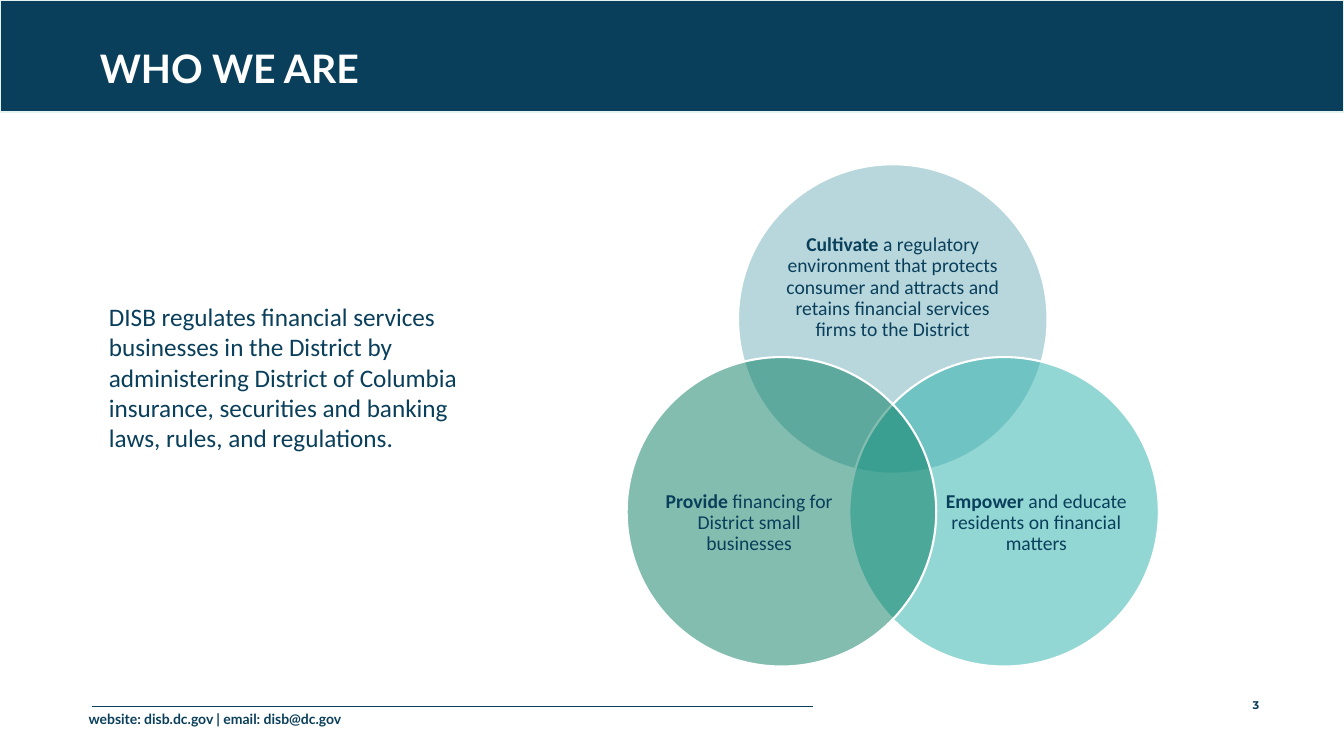
"""Build the "Who we are" slide: a banner, a statement and three overlapping circles."""
from dataclasses import dataclass
from math import cos, radians, sin

from lxml import etree
from pptx import Presentation
from pptx.dml.color import RGBColor
from pptx.enum.shapes import MSO_CONNECTOR, MSO_SHAPE
from pptx.enum.text import MSO_ANCHOR, MSO_AUTO_SIZE, PP_ALIGN
from pptx.oxml.ns import qn
from pptx.util import Inches, Length, Pt

LEFT, CENTER, RIGHT = PP_ALIGN.LEFT, PP_ALIGN.CENTER, PP_ALIGN.RIGHT
TOP, MIDDLE = MSO_ANCHOR.TOP, MSO_ANCHOR.MIDDLE
RECTANGLE, OVAL = MSO_SHAPE.RECTANGLE, MSO_SHAPE.OVAL
STRAIGHT = MSO_CONNECTOR.STRAIGHT
NO_AUTOFIT = MSO_AUTO_SIZE.NONE

COLUMNS, ROWS = 133.3, 75
NAVY, WHITE, PALE = "0A3F5B", "FFFFFF", "E4F3F1"
VENN_COLUMN, VENN_ROW = 88.55, 44.4
VENN_ORBIT, CIRCLE_SIZE = 12.75, 30.7


@dataclass(frozen=True)
class Box:
    """A rectangle in grid columns and rows."""
    column: float
    row: float
    width: float
    height: float


@dataclass(frozen=True)
class Circle:
    """One circle of the diagram and the placing of its label."""
    angle: float
    fill: str
    lead: str
    rest: str
    shift_column: float
    shift_row: float
    label_width: float
    label_height: float


CIRCLES = (
    Circle(-90, "71B0BC", "Cultivate", " a regulatory environment that protects consumer and "
           "attracts and retains financial services firms to the District", 0, -3.1, 22.5, 13.8),
    Circle(30, "28B0AA", "Empower", " and educate residents on financial matters",
           3.2, 1.1, 18.4, 16.9),
    Circle(150, "077C60", "Provide", " financing for District small businesses",
           -3.2, 1.1, 18.4, 16.9),
)


def grid(cells: float) -> Length:
    """Turn grid cells into a length."""
    return Inches(cells / 10)


def color(value: str) -> RGBColor:
    """Turn a hex string into a colour."""
    return RGBColor.from_string(value)


def centered_box(column: float, row: float, width: float, height: float) -> Box:
    """Return the box with the given centre."""
    return Box(column - width / 2, row - height / 2, width, height)


def place(shape, box: Box) -> None:
    """Move a shape onto a box of the grid."""
    shape.left, shape.top = grid(box.column), grid(box.row)
    shape.width, shape.height = grid(box.width), grid(box.height)


def write(shape, text: str, *, lead: str = "", size: float = 14, font: str = "Calibri",
          fill: str = NAVY, bold: bool = False, align=LEFT, anchor=TOP,
          spacing: float = 1.0, inset: float | None = None) -> None:
    """Write one paragraph, with an optional bold lead, into a shape."""
    frame = shape.text_frame
    frame.word_wrap = True
    frame.auto_size = NO_AUTOFIT
    frame.vertical_anchor = anchor
    if inset is not None:
        frame.margin_left = frame.margin_right = grid(inset)
        frame.margin_top = frame.margin_bottom = grid(inset)
    paragraph = frame.paragraphs[0]
    paragraph.alignment = align
    paragraph.line_spacing = spacing
    paragraph.space_before = Pt(0)
    for words, weight in ((lead, True), (text, bold)):
        if words:
            run = paragraph.add_run()
            run.text = words
            run.font.size, run.font.name, run.font.bold = Pt(size), font, weight
            run.font.color.rgb = color(fill)


def add_text(slide, box: Box, text: str, **style):
    """Add a text box to the slide."""
    shape = slide.shapes.add_textbox(0, 0, 0, 0)
    place(shape, box)
    write(shape, text, **style)
    return shape


def add_figure(slide, kind, box: Box, fill: str, line: str, weight: float,
               opacity: int = 100):
    """Add a filled and outlined preset shape."""
    shape = slide.shapes.add_shape(kind, 0, 0, 0, 0)
    place(shape, box)
    shape.shadow.inherit = False
    shape.fill.solid()
    shape.fill.fore_color.rgb = color(fill)
    shape.line.color.rgb = color(line)
    shape.line.width = Pt(weight)
    if opacity < 100:
        solid = shape._element.spPr.find(qn("a:solidFill"))
        etree.SubElement(solid[0], qn("a:alpha"), val=str(opacity * 1000))
    return shape


def add_banner(slide) -> None:
    """Put the title on a banner across the top."""
    banner = add_figure(slide, RECTANGLE, Box(0, 0, COLUMNS, 11.1), NAVY, PALE, 1)
    title = slide.shapes.title
    title._element.addprevious(banner._element)
    place(title, Box(8.9, 4.4, 116, 5.1))
    write(title, "WHO WE ARE", size=28, font="Lato", fill=WHITE, bold=True, spacing=0.9)


def add_statement(slide) -> None:
    """Fill the body placeholder with an unbulleted statement."""
    body = slide.placeholders[1]
    place(body, Box(9.8, 29.4, 39.8, 19.2))
    properties = body.text_frame.paragraphs[0]._p.get_or_add_pPr()
    properties.set("marL", "0")
    properties.set("indent", "0")
    etree.SubElement(properties, qn("a:buNone"))
    write(body, "DISB regulates financial services businesses in the District by "
          "administering District of Columbia insurance, securities and banking laws, "
          "rules, and regulations.", size=18)


def add_circle(slide, circle: Circle) -> None:
    """Draw one circle around the diagram's centre, with its label."""
    column = VENN_COLUMN + VENN_ORBIT * cos(radians(circle.angle))
    row = VENN_ROW + VENN_ORBIT * sin(radians(circle.angle))
    add_figure(slide, OVAL, centered_box(column, row, CIRCLE_SIZE, CIRCLE_SIZE),
               circle.fill, WHITE, 1.5, opacity=50)
    label = centered_box(column + circle.shift_column, row + circle.shift_row,
                         circle.label_width, circle.label_height)
    add_text(slide, label, circle.rest, lead=circle.lead, align=CENTER, anchor=MIDDLE,
             spacing=0.9, inset=0)


def add_footer(slide) -> None:
    """Add the contact line, its rule and the slide number."""
    add_text(slide, Box(7.8, 70, 37.1, 2.7), "website: disb.dc.gov | email: disb@dc.gov",
             size=10, font="Lato", bold=True)
    rule = slide.shapes.add_connector(STRAIGHT, grid(9.1), grid(70.1), grid(80.6), grid(70.1))
    rule.line.color.rgb = color(NAVY)
    rule.line.width = Pt(1)
    etree.SubElement(rule._element.spPr, qn("a:effectLst"))
    number = add_text(slide, Box(117.1, 68.8, 7.8, 2.2), "3", size=8, font="Montserrat",
                      bold=True, align=RIGHT)
    number.text_frame.margin_right = 0


def main() -> None:
    """Build and save the presentation."""
    presentation = Presentation()
    presentation.slide_width, presentation.slide_height = grid(COLUMNS), grid(ROWS)
    slide = presentation.slides.add_slide(presentation.slide_layouts[1])
    add_banner(slide)
    add_statement(slide)
    add_footer(slide)
    for circle in CIRCLES:
        add_circle(slide, circle)
    presentation.save("out.pptx")


if __name__ == "__main__":
    main()
